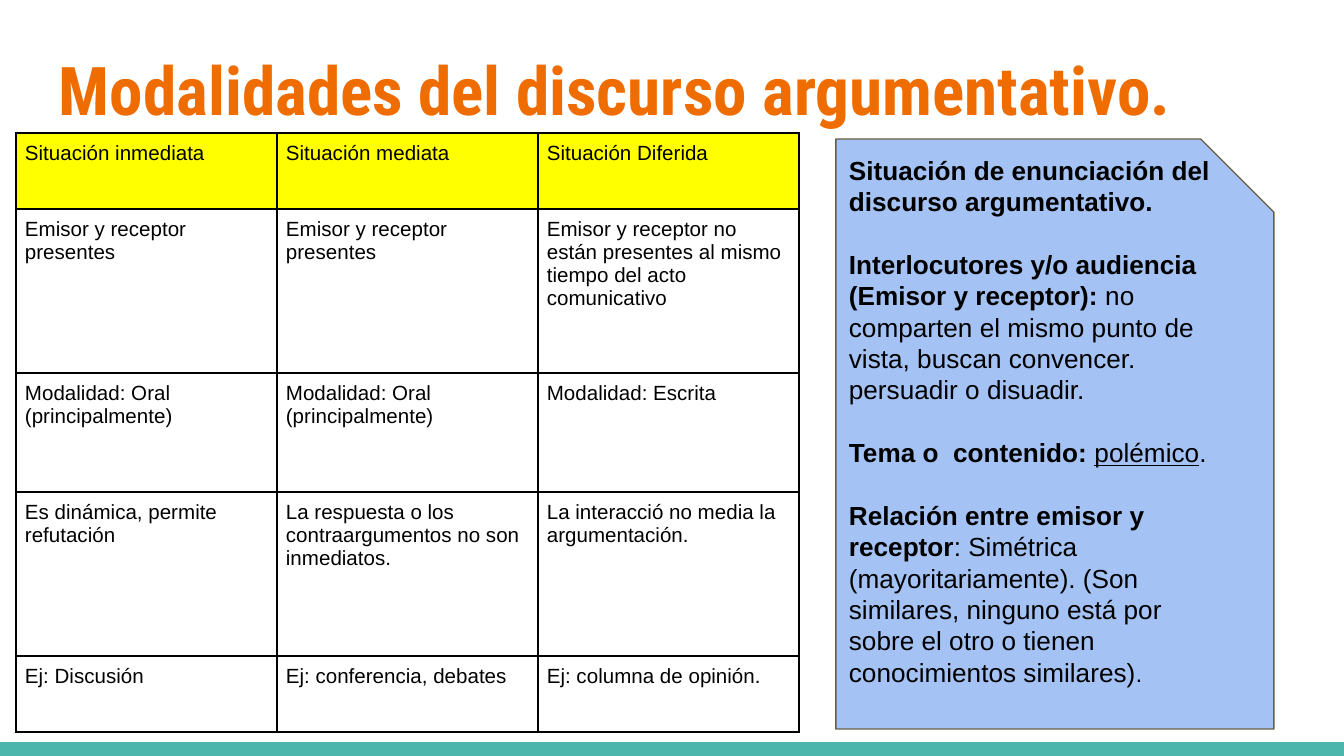
from dataclasses import dataclass

from lxml.etree import SubElement
from pptx import Presentation
from pptx.dml.color import RGBColor
from pptx.enum.shapes import MSO_SHAPE
from pptx.enum.text import MSO_ANCHOR
from pptx.oxml.ns import qn
from pptx.util import Emu, Pt

PX = 6804  # EMU per px, 134.4 px to the inch
ORANGE = RGBColor(0xEF, 0x6C, 0x00)
TEAL = RGBColor(0x4D, 0xB6, 0xAC)
YELLOW = RGBColor(0xFF, 0xFF, 0x00)
BLUE = RGBColor(0xA4, 0xC2, 0xF4)
BROWN = RGBColor(0x69, 0x5D, 0x46)
BLACK = RGBColor(0x00, 0x00, 0x00)


@dataclass(frozen=True)
class Box:
    left: int
    top: int
    width: int
    height: int

    def emu(self) -> list[Emu]:
        return [Emu(v * PX) for v in (self.left, self.top, self.width, self.height)]


@dataclass(frozen=True)
class Span:
    text: str
    size: int = 14
    bold: bool = False
    underline: bool = False
    font: str = "Arial"
    color: RGBColor = BLACK


SITUATIONS = [
    ["Situación inmediata", "Situación mediata", "Situación Diferida"],
    ["Emisor y receptor presentes", "Emisor y receptor presentes",
     "Emisor y receptor no están presentes al mismo tiempo del acto comunicativo"],
    ["Modalidad: Oral (principalmente)", "Modalidad: Oral (principalmente)",
     "Modalidad: Escrita"],
    ["Es dinámica, permite refutación",
     "La respuesta o los contraargumentos no son inmediatos.",
     "La interacció no media la argumentación."],
    ["Ej: Discusión", "Ej: conferencia, debates", "Ej: columna de opinión."],
]
ROW_HEIGHTS = [76, 164, 119, 164, 76]
COLUMN_WIDTH = 261

ENUNCIATION = [
    [Span("Situación de enunciación del discurso argumentativo.", bold=True)],
    [Span("Interlocutores y/o audiencia (Emisor y receptor):", bold=True),
     Span(" no comparten el mismo punto de vista, buscan convencer. persuadir o disuadir.")],
    [Span("Tema o  contenido: ", bold=True), Span("polémico", underline=True), Span(".")],
    [Span("Relación entre emisor y receptor", bold=True),
     Span(": Simétrica (mayoritariamente). (Son similares, ninguno está por sobre "
          "el otro o tienen conocimientos similares)"),
     Span(".", size=12)],
]


def write(frame, paragraphs: list[list[Span]], gap: float = 0) -> None:
    frame.word_wrap = True
    for index, spans in enumerate(paragraphs):
        paragraph = frame.add_paragraph() if index else frame.paragraphs[0]
        paragraph.alignment = 1
        if index:
            paragraph.space_before = Pt(gap)
        for span in spans:
            run = paragraph.add_run()
            run.text = span.text
            run.font.name = span.font
            run.font.size = Pt(span.size)
            run.font.bold = span.bold
            run.font.underline = span.underline
            run.font.color.rgb = span.color


def set_insets(holder, side: int, bottom: int) -> None:
    holder.margin_left = holder.margin_right = holder.margin_top = Emu(side * PX)
    holder.margin_bottom = Emu(bottom * PX)


def add_filled(slide, kind: MSO_SHAPE, box: Box, fill: RGBColor):
    shape = slide.shapes.add_shape(kind, *box.emu())
    shape.shadow.inherit = False
    shape.fill.solid()
    shape.fill.fore_color.rgb = fill
    shape.line.fill.background()
    return shape


def add_borders(cell) -> None:
    properties = cell._tc.get_or_add_tcPr()
    for position, side in enumerate(("a:lnL", "a:lnR", "a:lnT", "a:lnB")):
        line = properties.makeelement(qn(side), {"w": str(Pt(1))})
        fill = SubElement(line, qn("a:solidFill"))
        SubElement(fill, qn("a:srgbClr"), val=str(BLACK))
        properties.insert(position, line)


def add_situations(slide, left: int, top: int) -> None:
    columns = len(SITUATIONS[0])
    box = Box(left, top, COLUMN_WIDTH * columns, sum(ROW_HEIGHTS))
    table = slide.shapes.add_table(len(SITUATIONS), columns, *box.emu()).table
    table.first_row = table.horz_banding = False
    for column in table.columns:
        column.width = Emu(COLUMN_WIDTH * PX)
    for r, (height, texts) in enumerate(zip(ROW_HEIGHTS, SITUATIONS)):
        table.rows[r].height = Emu(height * PX)
        for c, text in enumerate(texts):
            cell = table.cell(r, c)
            set_insets(cell, 9, 9)
            if r == 0:
                cell.fill.solid()
                cell.fill.fore_color.rgb = YELLOW
            else:
                cell.fill.background()
            add_borders(cell)
            write(cell.text_frame, [[Span(text, size=11)]])


def add_enunciation(slide, box: Box) -> None:
    panel = add_filled(slide, MSO_SHAPE.SNIP_1_RECTANGLE, box, BLUE)
    panel.adjustments[0] = 0.167
    panel.line.color.rgb = BROWN
    panel.line.width = Pt(0.75)
    frame = panel.text_frame
    frame.vertical_anchor = MSO_ANCHOR.MIDDLE
    # The deeper bottom inset lifts the text by one line
    set_insets(frame, 13, 76)
    write(frame, ENUNCIATION, gap=16.8)


def main() -> None:
    presentation = Presentation()
    presentation.slide_width, presentation.slide_height = Emu(1344 * PX), Emu(756 * PX)
    slide = presentation.slides.add_slide(presentation.slide_layouts[6])

    # Bottom band
    add_filled(slide, MSO_SHAPE.RECTANGLE, Box(0, 742, 1344, 14), TEAL)

    # Title
    title = slide.shapes.add_textbox(*Box(46, 35, 1252, 103).emu()).text_frame
    set_insets(title, 13, 13)
    write(title, [[Span("Modalidades del discurso argumentativo.", size=36, bold=True,
                        font="Roboto Condensed", color=ORANGE)]])

    # Comparison table and side panel
    add_situations(slide, 16, 133)
    add_enunciation(slide, Box(836, 139, 438, 590))

    presentation.save("out.pptx")


if __name__ == "__main__":
    main()
